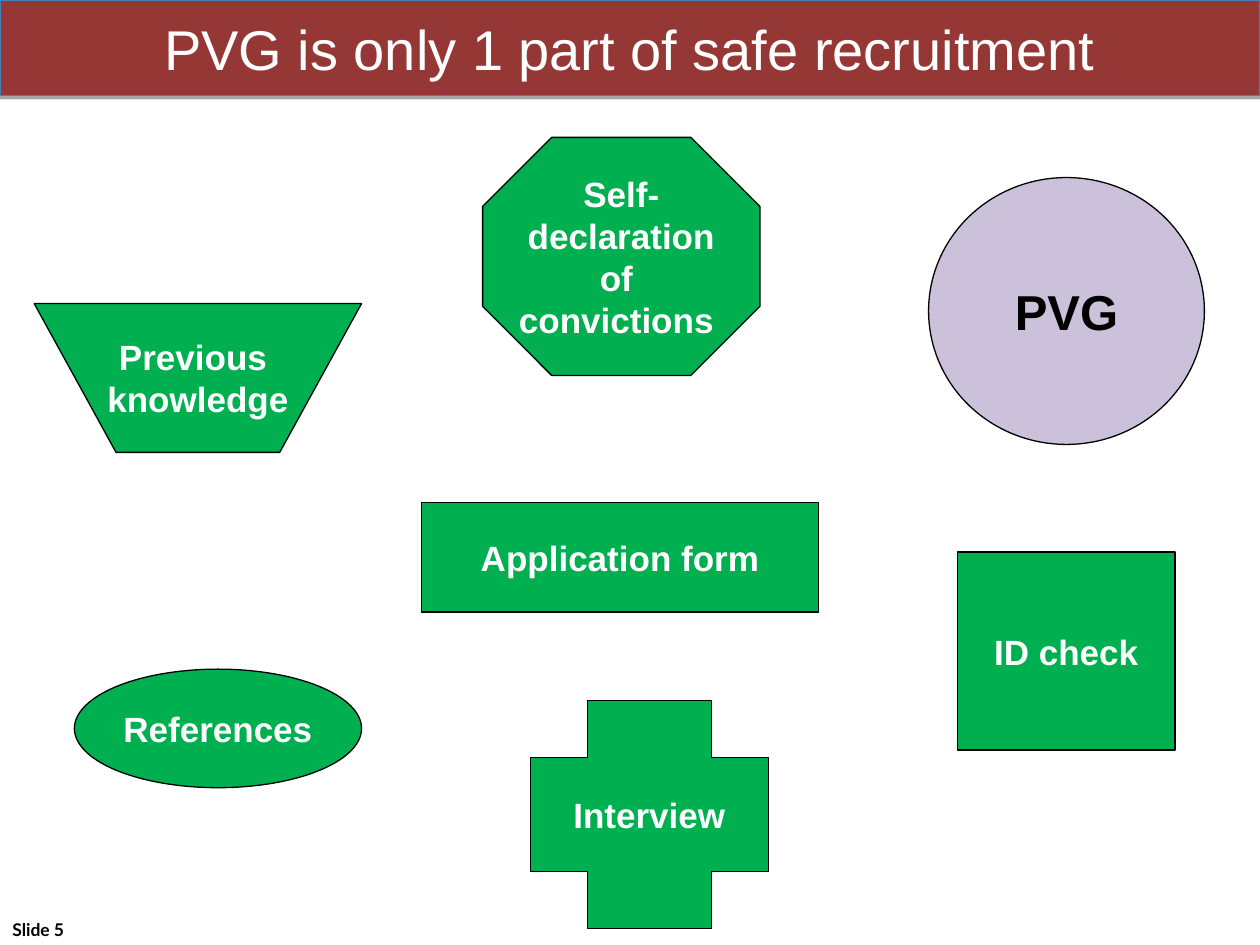
from lxml.etree import SubElement
from pptx import Presentation
from pptx.dml.color import RGBColor
from pptx.enum.shapes import MSO_SHAPE as Kind
from pptx.enum.text import MSO_ANCHOR, PP_ALIGN
from pptx.oxml.ns import qn
from pptx.util import Cm, Pt

HUES = {"green": "00B050", "lilac": "CCC1DA", "red": "953735",
        "blue": "4A7EBB", "white": "FFFFFF", "black": "000000"}


def hue(name):
    return RGBColor.from_string(HUES[name])


def style(shape, lines, fill, line, ink, wrap=False, **font):
    """Colour a shape and write its centred lines of text."""
    shape.shadow.inherit = False
    shape.fill.solid()
    shape.fill.fore_color.rgb = hue(fill)
    shape.line.color.rgb = hue(line)
    shape.line.width = Pt(0.75)
    frame = shape.text_frame
    frame.word_wrap = wrap
    frame.vertical_anchor = MSO_ANCHOR.MIDDLE
    frame.text = "\n".join(lines)
    for para in frame.paragraphs:
        para.alignment = PP_ALIGN.CENTER
        para.font.color.rgb = hue(ink)
        for key, value in font.items():
            setattr(para.font, key, value)


deck = Presentation()
deck.slide_width, deck.slide_height = Cm(25.4), Cm(19.05)
slide = deck.slides.add_slide(deck.slide_layouts[6])
shapes = slide.shapes

# Slide label
label = shapes.add_textbox(0, Cm(18.44), Cm(5.92), Cm(0.61))
frame = label.text_frame
frame.word_wrap = True
frame.margin_top = frame.margin_bottom = 0
frame.vertical_anchor = MSO_ANCHOR.MIDDLE
frame.text = "Slide 5"
look = {"name": "Lato", "size": Pt(10), "bold": True}
for key, value in look.items():
    setattr(frame.paragraphs[0].font, key, value)
frame.paragraphs[0].font.color.rgb = hue("black")

# Recruitment checks: kind, box in cm, adjustment, lines of text
bold = {"name": "Arial", "size": Pt(20), "bold": True}
checks = [
    (Kind.OVAL, (1.5, 13.49, 5.79, 2.39), None, ["References"]),
    (Kind.RECTANGLE, (8.5, 10.13, 8, 2.21), None, ["Application form"]),
    (Kind.RECTANGLE, (19.3, 11.13, 4.39, 3.99), None, ["ID check"]),
    (Kind.OCTAGON, (9.73, 2.77, 5.59, 4.8), 0.29,
     ["Self-", "declaration", "of ", "convictions "]),
    (Kind.CROSS, (10.69, 14.12, 4.8, 4.6), 0.25, ["Interview"]),
]
for kind, box, bend, lines in checks:
    shape = shapes.add_shape(kind, *map(Cm, box))
    if bend:
        shape.adjustments[0] = bend
    style(shape, lines, "green", "black", "white", **bold)

# Previous knowledge: a trapezoid with its long side on top
left, top, wide, high = Cm(0.69), Cm(6.12), Cm(6.6), Cm(3)
inset = wide // 4
path = shapes.build_freeform(left, top)
path.add_line_segments([(left + inset, top + high),
                        (left + wide - inset, top + high),
                        (left + wide, top)])
style(path.convert_to_shape(), ["Previous ", "knowledge"],
      "green", "black", "white", **bold)

# PVG
disc = shapes.add_shape(Kind.OVAL, Cm(18.72), Cm(3.58), Cm(5.56), Cm(5.38))
style(disc, ["PVG"], "lilac", "black", "black", **{**bold, "size": Pt(28)})

# Title bar with a thin shadow below
title = shapes.add_shape(Kind.RECTANGLE, 0, 0, deck.slide_width, Cm(1.93))
style(title, ["PVG is only 1 part of safe recruitment"],
      "red", "blue", "white", wrap=True, name="Arial", size=Pt(32))
effects = title._element.spPr.find(qn("a:effectLst"))
shade = SubElement(effects, qn("a:outerShdw"), blurRad="0",
                   dist=str(Pt(1.8)), dir="5400000", rotWithShape="0")
tint = SubElement(shade, qn("a:srgbClr"), val=HUES["black"])
SubElement(tint, qn("a:alpha"), val="35000")

deck.save("out.pptx")
